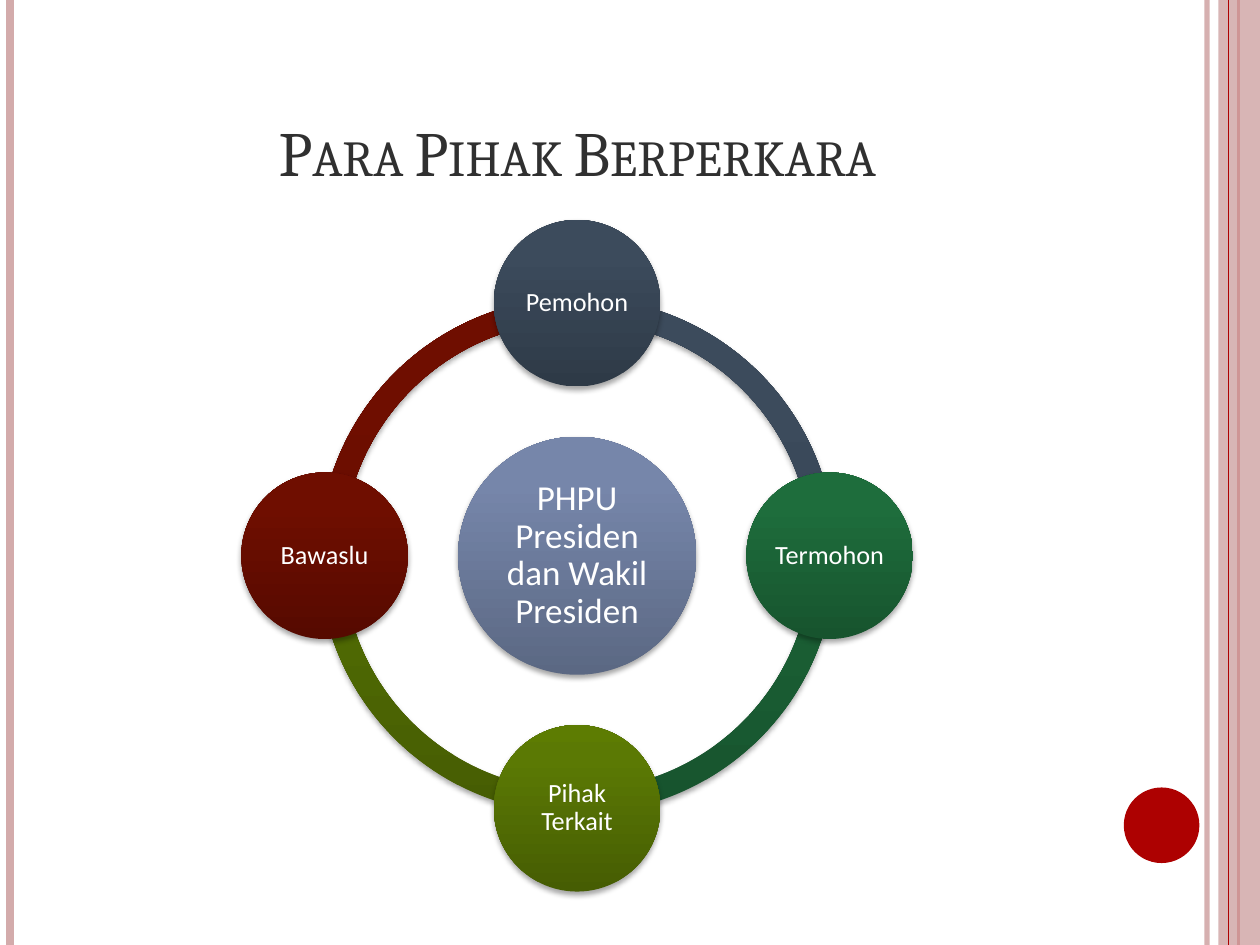
from copy import deepcopy
from dataclasses import dataclass
from math import cos, radians, sin

from lxml import etree
from pptx import Presentation
from pptx import util as u
from pptx.dml.color import RGBColor
from pptx.enum import shapes, text
from pptx.oxml import ns


@dataclass(frozen=True)
class Theme:
    pink: str = "D3ABAB"
    red: str = "AD0101"
    ink: str = "303030"
    white: str = "FFFFFF"
    slate: tuple = ("2E3A47", "3C4B5C", "3C4C5D")
    green: tuple = ("17542E", "1E6D3C", "1C6F3C")
    olive: tuple = ("465D03", "5B7904", "5D7C02")
    wine: tuple = ("560A00", "6F0E00", "700E00")
    blue: tuple = ("5B6883", "7686AA", "7687AB")
    head: str = "Cambria"
    body: str = "Calibri"
    title: float = 36
    hub: float = 20
    node: float = 15


class Deck:
    def __init__(self, theme):
        self.theme = theme
        self.prs = Presentation()
        self.prs.slide_width = u.Pt(720)
        self.prs.slide_height = u.Pt(540)
        self.slide = self.prs.slides.add_slide(self.prs.slide_layouts[5])
        self.items = self.slide.shapes

    def sub(self, node, tag, **attrs):
        return etree.SubElement(node, ns.qn(tag), {k: str(v) for k, v in attrs.items()})

    def fade(self, shape, alpha):
        color = next(shape._element.spPr.iter(ns.qn("a:srgbClr")))
        self.sub(color, "a:alpha", val=alpha * 1000)

    def font(self, para, face, size, color):
        para.font.name = face
        para.font.size = u.Pt(size)
        para.font.color.rgb = RGBColor.from_string(color)

    def title(self, words, x, y, w, h):
        box = self.items.title
        box.left, box.top, box.width, box.height = map(u.Pt, (x, y, w, h))
        frame = box.text_frame
        frame.text = words
        frame.vertical_anchor = text.MSO_ANCHOR.BOTTOM
        para = frame.paragraphs[0]
        para.alignment = text.PP_ALIGN.CENTER
        self.font(para, self.theme.head, self.theme.title, self.theme.ink)
        para.font._element.set("cap", "small")

    def rule(self, x, color, width, alpha=100):
        line = self.items.add_connector(
            shapes.MSO_CONNECTOR.STRAIGHT, u.Pt(x), 0, u.Pt(x), u.Pt(540))
        line.line.color.rgb = RGBColor.from_string(color)
        line.line.width = u.Pt(width)
        self.sub(line._element.spPr, "a:effectLst")
        if alpha < 100:
            self.fade(line, alpha)

    def shape(self, kind, x, y, w, h):
        item = self.items.add_shape(kind, *map(u.Pt, (x, y, w, h)))
        item.shadow.inherit = False
        item.line.fill.background()
        return item

    def flat(self, kind, x, y, w, h, color, alpha=100):
        item = self.shape(kind, x, y, w, h)
        item.fill.solid()
        item.fill.fore_color.rgb = RGBColor.from_string(color)
        if alpha < 100:
            self.fade(item, alpha)

    def glossy(self, kind, cx, cy, size, shades):
        item = self.shape(kind, cx - size / 2, cy - size / 2, size, size)
        item.fill.gradient()
        item.fill.gradient_angle = 90
        stops = next(item._element.spPr.iter(ns.qn("a:gsLst")))
        stops.insert(1, deepcopy(stops[0]))
        for stop, place, shade in zip(item.fill.gradient_stops, (0, 0.8, 1), shades):
            stop.position = place
            stop.color.rgb = RGBColor.from_string(shade)
        glow = self.sub(
            item._element.spPr.find(ns.qn("a:effectLst")), "a:outerShdw",
            blurRad=u.Pt(3.1), dist=u.Pt(1.8), dir=5400000, rotWithShape=0)
        black = self.sub(glow, "a:srgbClr", val="000000")
        self.sub(black, "a:alpha", val=35000)
        return item

    def arc(self, cx, cy, size, start, shades):
        item = self.glossy(shapes.MSO_SHAPE.BLOCK_ARC, cx, cy, size, shades)
        item.adjustments[0] = start % 360 * 0.6
        item.adjustments[1] = (start + 90) % 360 * 0.6
        item.adjustments[2] = 0.046

    def disc(self, cx, cy, size, shades, words, points, inset):
        item = self.glossy(shapes.MSO_SHAPE.OVAL, cx, cy, size, shades)
        frame = item.text_frame
        frame.word_wrap = True
        frame.vertical_anchor = text.MSO_ANCHOR.MIDDLE
        frame.margin_left = frame.margin_right = u.Pt(inset)
        frame.margin_top = frame.margin_bottom = u.Pt(inset)
        frame.text = words
        para = frame.paragraphs[0]
        para.alignment = text.PP_ALIGN.CENTER
        para.line_spacing = 0.9
        self.font(para, self.theme.body, points, self.theme.white)


def main():
    look = Theme()
    deck = Deck(look)
    deck.rule(689.8, look.pink, 3, 93)
    deck.rule(5.8, look.pink, 4.5)
    deck.rule(707.8, look.red, 1.5)
    deck.flat(shapes.MSO_SHAPE.RECTANGLE, 696.2, 0, 23.8, 540, look.pink, 87)
    deck.rule(702, look.red, 0.75)
    deck.flat(shapes.MSO_SHAPE.OVAL, 642.2, 450, 43.2, 43.2, look.red)
    deck.title("Para Pihak Berperkara", 36, 21.6, 588, 90)

    cx, cy, orbit = 329.8, 317.6, 144.3
    parties = [
        ("Pemohon", look.slate, 270),
        ("Termohon", look.green, 0),
        ("Pihak Terkait", look.olive, 90),
        ("Bawaslu", look.wine, 180),
    ]
    for _, shades, angle in reversed(parties):
        deck.arc(cx, cy, 295.2, angle, shades)
    deck.disc(cx, cy, 136, look.blue, "PHPU Presiden dan Wakil Presiden", look.hub, 2)
    for name, shades, angle in parties:
        turn = radians(angle)
        deck.disc(cx + orbit * cos(turn), cy + orbit * sin(turn), 95.2,
                  shades, name, look.node, 1.5)
    deck.prs.save("out.pptx")


if __name__ == "__main__":
    main()
